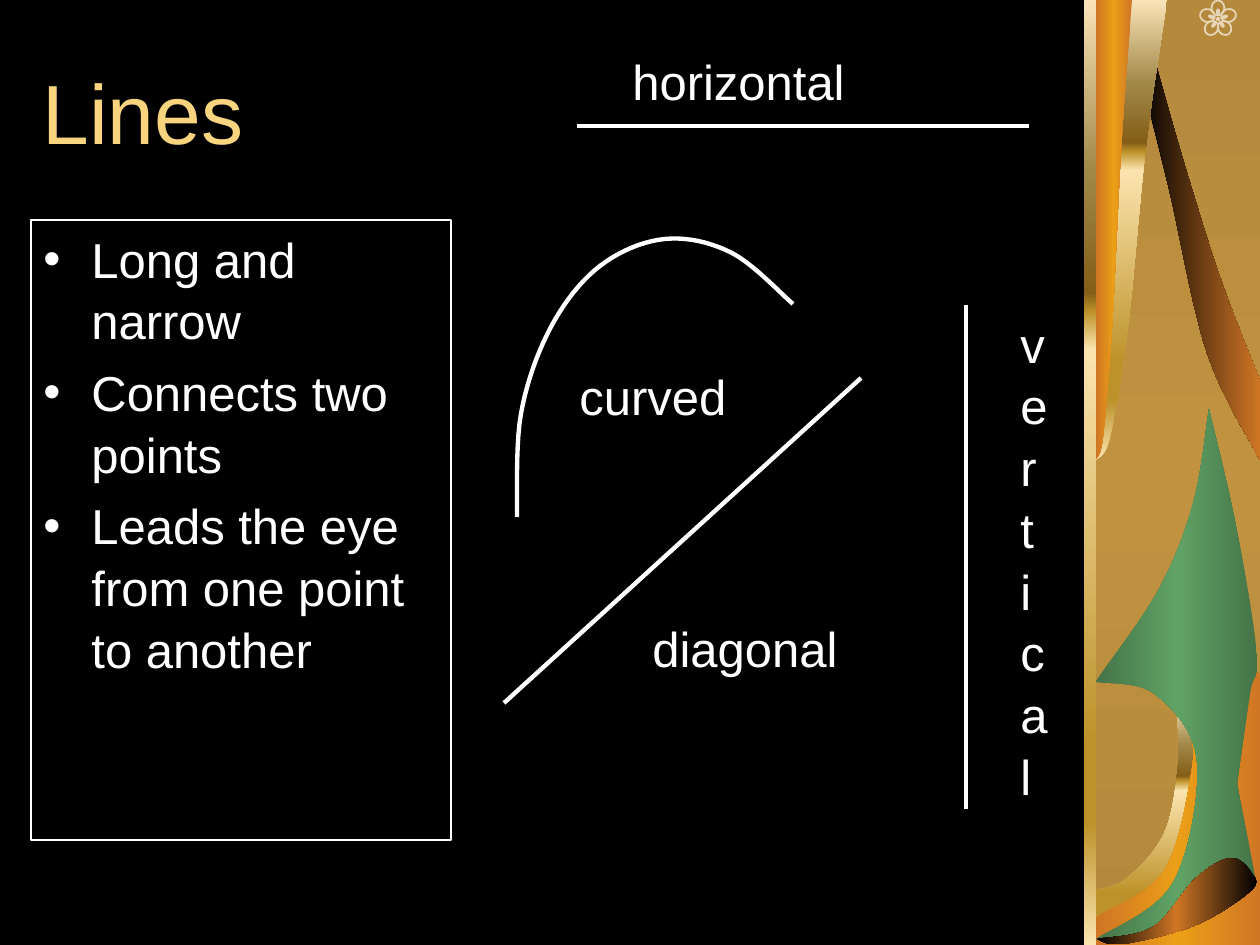
import math
import lxml.etree
import pptx
import pptx.dml.color
import pptx.enum.shapes
import pptx.enum.text
import pptx.oxml.ns
import pptx.util

SCALE = 914400 / 126
WIDTH, HEIGHT = 1260, 945
PANEL = 1096
SHAPES = pptx.enum.shapes.MSO_SHAPE
ALIGN = pptx.enum.text.PP_ALIGN
ANCHOR = pptx.enum.text.MSO_ANCHOR
qn = pptx.oxml.ns.qn


class Theme:
    font = "Arial"
    title_size, text_size = 48, 28
    leading = 1.05
    back, ink, title, petal = "000000", "FFFFFF", "F7D47D", "E7D6B7"
    sand = (90, {0: "B4893C", 50: "C19341", 100: "B4893C"})
    gold = (90, {0: "FAE3B7", 18: "A28949", 31: "835E17", 33: "BD922A",
                 37: "FBE4AE", 87: "BD922A", 79: "BD922A", 100: "FBE4AE"})
    orange = (0, {0: "CF7625", 50: "EB9F17", 100: "CF7625"})
    green = (0, {0: "457448", 50: "60A265", 100: "457448"})
    ember = (0, {0: "000000", 100: "CF7625"})
    bronze = (0, {0: "000000", 50: "CF7625", 100: "000000"})


def emu(px):
    return pptx.util.Emu(round(px * SCALE))


def color(value):
    return pptx.dml.color.RGBColor.from_string(value)


def paint(shape, fill=None, line=None, width=0.75):
    """Set a solid, gradient or empty fill and an optional outline."""
    shape.shadow.inherit = False
    shape.fill.background()
    if isinstance(fill, str):
        shape.fill.solid()
        shape.fill.fore_color.rgb = color(fill)
    elif fill:
        angle, stops = fill
        gradient = lxml.etree.Element(qn("a:gradFill"), rotWithShape="1")
        stop_list = lxml.etree.SubElement(gradient, qn("a:gsLst"))
        for position, value in sorted(stops.items()):
            stop = lxml.etree.SubElement(stop_list, qn("a:gs"), pos=str(position * 1000))
            lxml.etree.SubElement(stop, qn("a:srgbClr"), val=value)
        lxml.etree.SubElement(gradient, qn("a:lin"), ang=str(angle * 60000), scaled="0")
        properties = shape._element.spPr
        properties.replace(properties.find(qn("a:noFill")), gradient)
    if line:
        shape.line.color.rgb = color(line)
        shape.line.width = pptx.util.Pt(width)
    else:
        shape.line.fill.background()


def add_preset(page, kind, place, rotation=0, **look):
    """Add a painted preset shape."""
    shape = page.shapes.add_shape(kind, *map(emu, place))
    shape.rotation = rotation
    paint(shape, **look)
    return shape


def smooth(knots, steps=10):
    """Return points on a Catmull-Rom curve through the knots."""
    padded = [knots[0], *knots, knots[-1]]
    points = [knots[0]]
    for a, b, c, d in zip(padded, padded[1:], padded[2:], padded[3:]):
        for step in range(1, steps + 1):
            t = step / steps
            points.append(tuple(
                q + t / 2 * (r - p + t * (2 * p - 5 * q + 4 * r - s
                                          + t * (3 * (q - r) + s - p)))
                for p, q, r, s in zip(a, b, c, d)))
    return points


def add_outline(page, *curves, close=True, **look):
    """Join smooth curves by straight edges into one outline."""
    first, *rest = [(emu(x), emu(y)) for knots in curves for x, y in smooth(knots)]
    builder = page.shapes.build_freeform(*first, scale=1.0)
    builder.add_line_segments(rest, close=close)
    paint(builder.convert_to_shape(), **look)


def add_flower(page, x, y, petals=5):
    """Draw looped petals with a filled oval in each, around a dot."""
    for index in range(petals):
        turn = 360 / petals * index
        angle = math.radians(turn - 90)
        for reach, wide, tall, look in ((11, 13, 15, {"line": Theme.petal, "width": 1}),
                                        (7, 4, 7, {"fill": Theme.petal})):
            left = x + reach * math.cos(angle) - wide / 2
            top = y + reach * math.sin(angle) - tall / 2
            add_preset(page, SHAPES.OVAL, (left, top, wide, tall), turn, **look)
    add_preset(page, SHAPES.OVAL, (x - 2, y - 2, 4, 4), fill=Theme.petal)


def add_drape(page, spread, fill):
    """Hang a tapering strip whose width is a share of the full spread."""
    profile = ((1, 0), (0.7, 149), (0.46, 320), (0.2, 436), (0, 460))
    edge = [(PANEL + spread * share, y) for share, y in profile]
    add_outline(page, edge, [(PANEL, 0)], fill=fill)


def add_ornament(page):
    """Build the decorated panel on the right."""
    add_preset(page, SHAPES.RECTANGLE, (PANEL, 0, WIDTH - PANEL, HEIGHT), fill=Theme.sand)
    add_flower(page, 1218, 19)
    add_outline(page, [(1177, 711), (1178, 766), (1164, 834), (1126, 879), (PANEL, 890)],
                [(PANEL, HEIGHT)], [(1230, HEIGHT)], [(1230, 700)], fill=Theme.gold)
    add_outline(page, [(PANEL, 917), (1164, 871), (1192, 769), (1189, 726)], [(1244, 669)],
                [(WIDTH, 673)], [(WIDTH, HEIGHT)], [(PANEL, HEIGHT)], fill=Theme.orange)
    add_outline(page, [(1209, 409), (1193, 504), (1158, 591), (PANEL, 681)],
                [(PANEL, 682), (1155, 694), (1197, 761), (1173, 883), (PANEL, 939)],
                [(1135, 942), (1177, 925), (1223, 869), (1255, 876)],
                [(1237, 784), (1250, 693), (1257, 655), (1236, 526), (1209, 409)],
                fill=Theme.green)
    add_outline(page, [(1152, 50), (1182, 156), (1220, 277), (WIDTH, 381)],
                [(WIDTH, 460), (1207, 353), (1169, 189), (1140, 73)], fill=Theme.ember)
    add_drape(page, 71, Theme.gold)
    add_drape(page, 36, Theme.orange)
    add_preset(page, SHAPES.RECTANGLE, (1084, 0, 12, HEIGHT), fill=Theme.gold)
    add_outline(page, [(PANEL, 939), (1153, 927), (1196, 878), (1231, 858), (1252, 873),
                       (1252, 890), (1196, 925), (1123, 944), (PANEL, 939)],
                fill=Theme.bronze)


def add_line(page, *ends):
    """Add a plain straight line."""
    line = page.shapes.add_connector(pptx.enum.shapes.MSO_CONNECTOR.STRAIGHT, *map(emu, ends))
    line.line.color.rgb = color(Theme.ink)
    line.line.width = pptx.util.Pt(2.5)
    lxml.etree.SubElement(line._element.spPr, qn("a:effectLst"))


def write(box, text, size=Theme.text_size, ink=Theme.ink, align=ALIGN.LEFT,
          anchor=ANCHOR.TOP, leading=Theme.leading, bullets=False):
    """Fill a box with paragraphs, one for each line of text."""
    frame = box.text_frame
    frame.word_wrap = True
    frame.vertical_anchor = anchor
    frame.text = text
    for index, para in enumerate(frame.paragraphs):
        para.alignment = align
        para.line_spacing = leading
        if index:
            para.space_before = pptx.util.Pt(size * 0.2)
        if bullets:
            properties = para._p.get_or_add_pPr()
            properties.set("marL", str(emu(48)))
            properties.set("indent", str(-emu(48)))
            lxml.etree.SubElement(properties, qn("a:buFont"), typeface=Theme.font)
            lxml.etree.SubElement(properties, qn("a:buChar"), char="•")
        for span in para.runs:
            span.font.name = Theme.font
            span.font.size = pptx.util.Pt(size)
            span.font.color.rgb = color(ink)


def add_label(page, text, place, **style):
    """Add a text box."""
    write(page.shapes.add_textbox(*map(emu, place)), text, **style)


def main():
    deck = pptx.Presentation()
    deck.slide_width, deck.slide_height = emu(WIDTH), emu(HEIGHT)
    page = deck.slides.add_slide(deck.slide_layouts[6])
    page.background.fill.solid()
    page.background.fill.fore_color.rgb = color(Theme.back)
    add_ornament(page)

    add_label(page, "Lines", (30, 32, 1031, 158), size=Theme.title_size,
              ink=Theme.title, anchor=ANCHOR.MIDDLE, leading=1.0)
    body = add_preset(page, SHAPES.RECTANGLE, (31, 220, 420, 620), line=Theme.ink)
    write(body, "Long and narrow\nConnects two points\n"
                "Leads the eye from one point to another", bullets=True)

    for ends in ((577, 126, 1029, 126), (966, 305, 966, 809), (504, 703, 861, 378)):
        add_line(page, *ends)
    add_outline(page, [(793, 304), (732, 253), (665, 239), (600, 266), (551, 327),
                       (521, 414), (517, 517)], close=False, line=Theme.ink, width=2.5)
    add_label(page, "horizontal", (620, 42, 336, 72))
    add_label(page, "curved", (567, 357, 220, 72))
    add_label(page, "vertical", (1008, 305, 34, 484), align=ALIGN.CENTER)
    add_label(page, "diagonal", (640, 609, 242, 72))
    deck.save("out.pptx")


if __name__ == "__main__":
    main()
